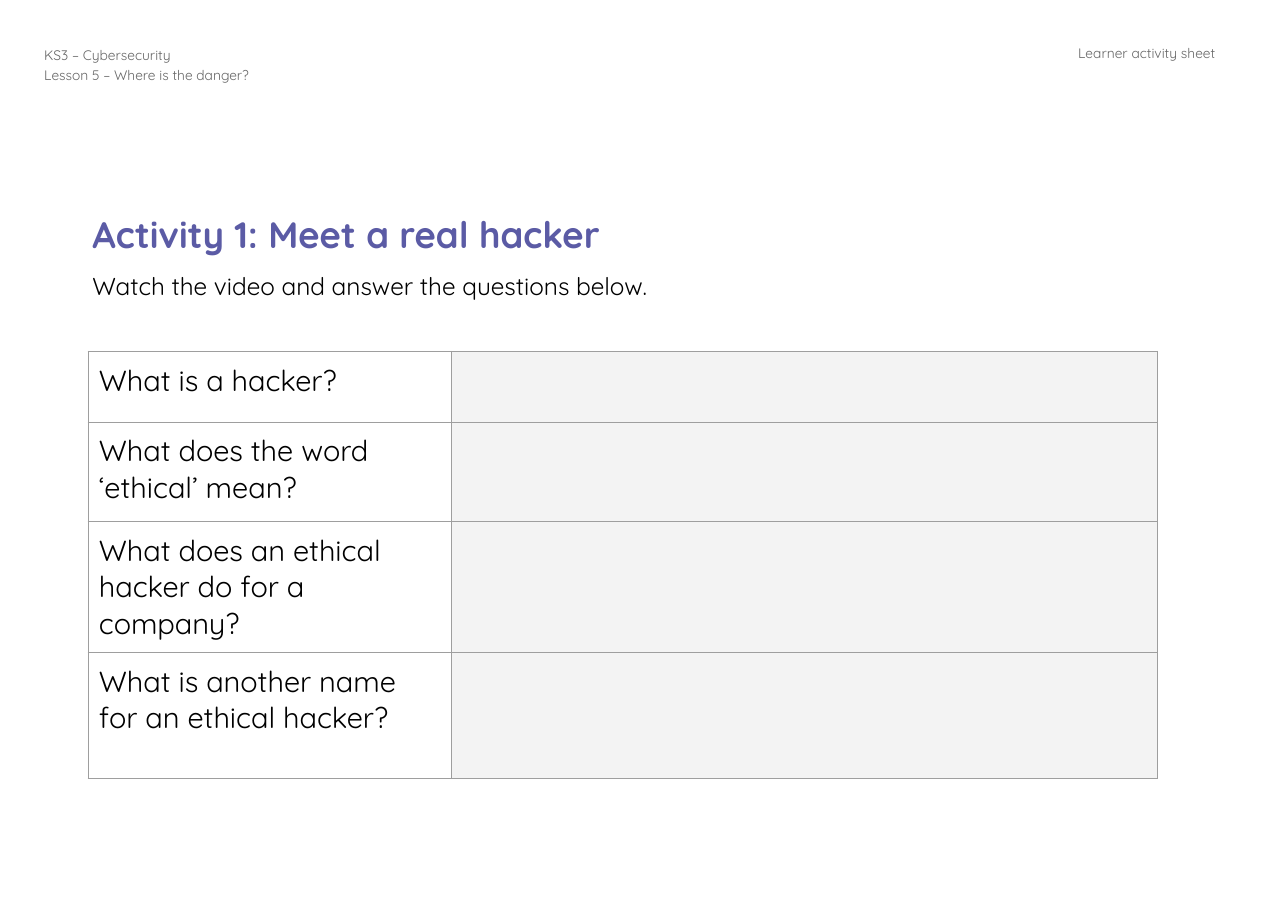
from pptx import Presentation
from pptx.dml.color import RGBColor
from pptx.enum.text import MSO_ANCHOR, MSO_AUTO_SIZE, PP_ALIGN
from pptx.oxml.ns import qn
from pptx.util import Cm, Pt
from lxml.etree import SubElement

FONT = "Quicksand"
COLORS = {"heading": "5B5BA5", "text": "000000", "header": "666666",
          "border": "9E9E9E", "answer": "F3F3F3"}
QUESTIONS = [
    ("What is a hacker?", 1.63),
    ("What does the word ‘ethical’ mean?", 2.29),
    ("What does an ethical hacker do for a company?", 2.9),
    ("What is another name for an ethical hacker?", 2.9),
]


def write(tf, *lines, size, color="text", bold=False, align=PP_ALIGN.LEFT, spacing=1.0):
    """Fill a text frame with one formatted paragraph per line."""
    for i, line in enumerate(lines):
        p = tf.add_paragraph() if i else tf.paragraphs[0]
        p.alignment = align
        p.line_spacing = spacing
        p.space_before = p.space_after = Pt(0)
        r = p.add_run()
        r.text = line
        r.font.name = FONT
        r.font.size = Pt(size)
        r.font.bold = bold
        r.font.color.rgb = RGBColor.from_string(COLORS[color])


def set_placeholder(sp, text, left, top, width, height, **fmt):
    """Move a placeholder and give it plain, unbulleted text."""
    sp.left, sp.top, sp.width, sp.height = Cm(left), Cm(top), Cm(width), Cm(height)
    tf = sp.text_frame
    tf.word_wrap = True
    tf.auto_size = MSO_AUTO_SIZE.NONE
    tf.vertical_anchor = MSO_ANCHOR.TOP
    tf.margin_left = tf.margin_right = Cm(0.25)
    tf.margin_top = tf.margin_bottom = Cm(0)
    write(tf, text, spacing=1.15, **fmt)
    pPr = tf.paragraphs[0]._p.get_or_add_pPr()
    pPr.set("marL", "0")
    pPr.set("indent", "0")
    SubElement(pPr, qn("a:buNone"))


def set_borders(cell, color):
    """Draw all four cell borders, or hide them when color is None."""
    tcPr = cell._tc.get_or_add_tcPr()
    for side in "LRTB":
        ln = SubElement(tcPr, qn(f"a:ln{side}"), w=str(Pt(0.75)))
        if color:
            fill = SubElement(ln, qn("a:solidFill"))
            SubElement(fill, qn("a:srgbClr"), val=COLORS[color])
        else:
            SubElement(ln, qn("a:noFill"))


def add_grid(slide, left, top, widths, heights, margin, border=None):
    """Add an unstyled table with the given column widths and row heights."""
    frame = slide.shapes.add_table(len(heights), len(widths), Cm(left), Cm(top),
                                   Cm(sum(widths)), Cm(sum(heights)))
    table = frame.table
    table.first_row = table.horz_banding = False
    for column, width in zip(table.columns, widths):
        column.width = Cm(width)
    for row, height in zip(table.rows, heights):
        row.height = Cm(height)
    for cell in table.iter_cells():
        cell.margin_left = cell.margin_right = Cm(margin)
        cell.margin_top = cell.margin_bottom = Cm(margin)
        set_borders(cell, border)
        cell.fill.background()
    return table


def add_header(slide):
    """Add the lesson name and the sheet type along the top."""
    table = add_grid(slide, 0.84, 0.84, [13.59, 14.02], [1.52], 0.18)
    lesson, sheet = table.cell(0, 0), table.cell(0, 1)
    write(lesson.text_frame, "KS3 – Cybersecurity", "Lesson 5 – Where is the danger?",
          size=9, color="header", spacing=1.15)
    sheet.margin_right = Cm(0.43)
    write(sheet.text_frame, "Learner activity sheet",
          size=9, color="header", align=PP_ALIGN.RIGHT)


def add_questions(slide):
    """Add the question table with shaded answer cells."""
    heights = [height for _, height in QUESTIONS]
    table = add_grid(slide, 2.03, 8.1, [8.38, 16.28], heights, 0.25, "border")
    for i, (question, _) in enumerate(QUESTIONS):
        write(table.cell(i, 0).text_frame, question, size=19)
        answer = table.cell(i, 1)
        answer.fill.solid()
        answer.fill.fore_color.rgb = RGBColor.from_string(COLORS["answer"])


def main():
    """Build the activity sheet and save it."""
    prs = Presentation()
    prs.slide_width, prs.slide_height = Cm(29.7), Cm(21)
    slide = prs.slides.add_slide(prs.slide_layouts[1])
    title, body = slide.placeholders
    add_header(slide)
    set_placeholder(title, "Activity 1: Meet a real hacker", 1.88, 4.72, 23, 1.3,
                    size=24, color="heading", bold=True)
    set_placeholder(body, "Watch the video and answer the questions below.",
                    1.88, 6.15, 23, 1, size=16)
    add_questions(slide)
    prs.save("out.pptx")


if __name__ == "__main__":
    main()
